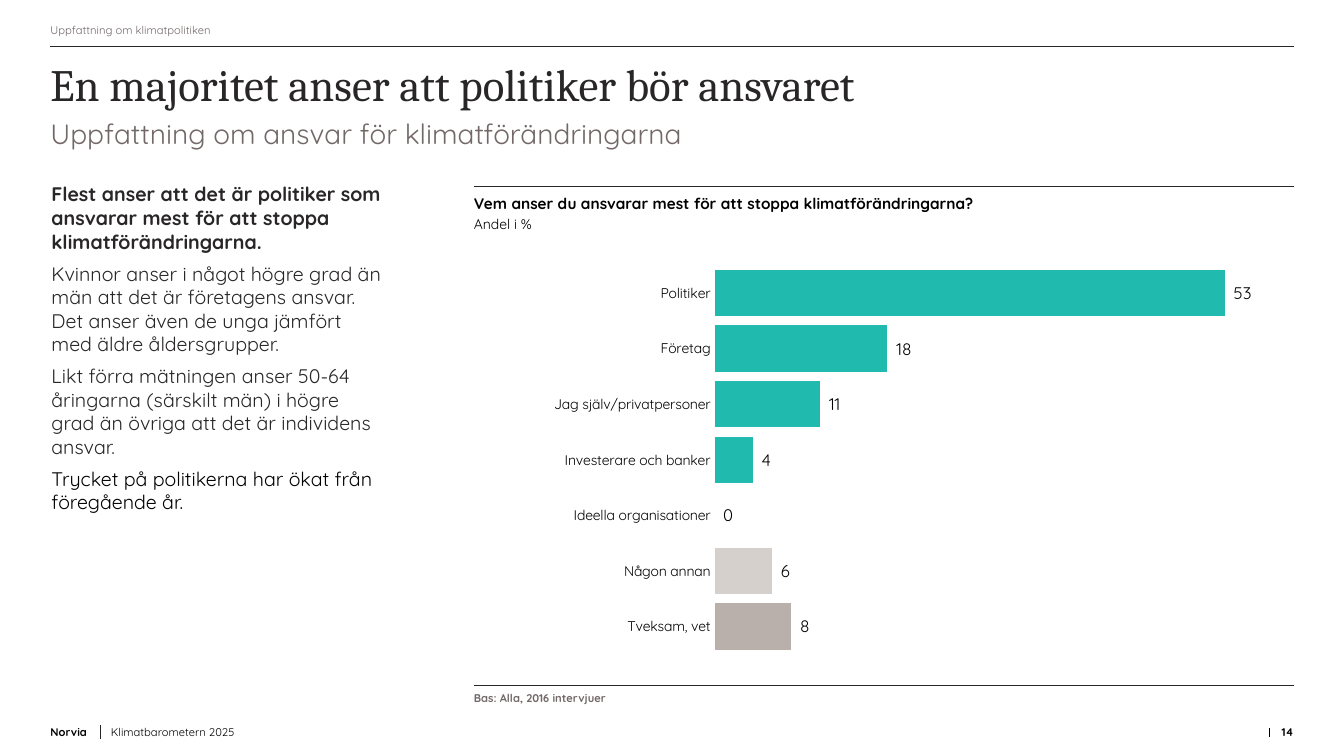
from lxml import etree
from pptx import Presentation
from pptx import util as u
from pptx.chart.data import CategoryChartData
from pptx.dml.color import RGBColor
from pptx.enum import chart as ch, shapes, text
from pptx.oxml import ns, parse_xml

Inches, Pt = u.Inches, u.Pt
INK = RGBColor(0x28, 0x26, 0x26)
BLACK = RGBColor(0, 0, 0)
GREY = RGBColor(0x73, 0x68, 0x68)
WHITE = RGBColor(0xFF, 0xFF, 0xFF)
TEAL = RGBColor(0x20, 0xBA, 0xAF)
SAND = RGBColor(0xD6, 0xD0, 0xCD)
TAUPE = RGBColor(0xBA, 0xB0, 0xAB)
SANS, SERIF = "Quicksand", "Cambria"
LEFT, RIGHT, COL = 0.5, 12.83, 4.7

BODY = [
    ("Flest anser att det är politiker som ansvarar mest för att stoppa "
     "klimatförändringarna.", True, INK),
    ("Kvinnor anser i något högre grad än män att det är företagens ansvar. "
     "Det anser även de unga jämfört med äldre åldersgrupper.", False, INK),
    ("Likt förra mätningen anser 50-64 åringarna (särskilt män) i högre grad "
     "än övriga att det är individens ansvar.", False, INK),
    ("Trycket på politikerna har ökat från föregående år.", False, BLACK),
]
BARS = [
    ("Politiker", 53, TEAL),
    ("Företag", 18, TEAL),
    ("Jag själv/privatpersoner", 11, TEAL),
    ("Investerare och banker", 4, TEAL),
    ("Ideella organisationer", 0, TEAL),
    ("Någon annan", 6, SAND),
    ("Tveksam, vet", 8, TAUPE),
]


def style(font, size, color=BLACK, bold=False, face=SANS):
    font.size, font.name, font.bold = Pt(size), face, bold
    font.color.rgb = color


def write(slide, box, paras, size=8, color=BLACK, bold=False, face=SANS,
          anchor=text.MSO_ANCHOR.TOP, align=text.PP_ALIGN.LEFT,
          top=0, after=0, lead=None):
    """Add a text box; paras is a string or a list of (text, bold, color)."""
    frame = slide.shapes.add_textbox(*map(Inches, box)).text_frame
    frame.word_wrap = True
    frame.vertical_anchor = anchor
    frame.margin_left = frame.margin_right = frame.margin_bottom = 0
    frame.margin_top = Inches(top)
    if isinstance(paras, str):
        paras = [(paras, bold, color)]
    for i, (words, heavy, tint) in enumerate(paras):
        para = frame.add_paragraph() if i else frame.paragraphs[0]
        para.alignment = align
        para.space_after = Pt(after)
        if lead:
            para.line_spacing = Pt(lead)
        run = para.add_run()
        run.text = words
        style(run.font, size, tint, heavy, face)


def rule(slide, x1, y1, x2, y2, color=INK):
    line = slide.shapes.add_connector(
        shapes.MSO_CONNECTOR.STRAIGHT, *map(Inches, (x1, y1, x2, y2)))
    line.line.color.rgb = color
    line.line.width = Pt(0.5)
    etree.SubElement(line._element.spPr, ns.qn("a:effectLst"))


def place_plot(chart, x, y, w, h):
    """Fix the inner plot area as fractions of the chart."""
    area = chart._chartSpace.chart.plotArea
    for old in area.findall(ns.qn("c:layout")):
        area.remove(old)
    area.insert(0, parse_xml(
        f'<c:layout {ns.nsdecls("c")}><c:manualLayout>'
        '<c:layoutTarget val="inner"/><c:xMode val="edge"/>'
        f'<c:yMode val="edge"/><c:x val="{x}"/><c:y val="{y}"/>'
        f'<c:w val="{w}"/><c:h val="{h}"/></c:manualLayout></c:layout>'))


def bars(slide, box):
    data = CategoryChartData(number_format="#\\ ##0")
    data.categories = [name for name, _, _ in BARS]
    data.add_series("Andel i %", [value for _, value, _ in BARS])
    chart = slide.shapes.add_chart(
        ch.XL_CHART_TYPE.BAR_CLUSTERED, *map(Inches, box), data).chart
    chart.has_legend = chart.has_title = False
    style(chart.font, 10)
    place_plot(chart, 0.294, 0.037, 0.706, 0.927)

    # Axes
    cat, val = chart.category_axis, chart.value_axis
    cat.reverse_order = True
    cat.major_tick_mark = cat.minor_tick_mark = ch.XL_TICK_MARK.NONE
    cat.format.line.fill.background()
    style(cat.tick_labels.font, 10)
    val.visible = val.has_major_gridlines = False
    val.minimum_scale, val.maximum_scale = 0, 60

    # Bars and their labels
    plot = chart.plots[0]
    plot.gap_width, plot.vary_by_categories = 17, False
    series = plot.series[0]
    series.invert_if_negative = False
    paint(series.format, TEAL)
    for i, (_, _, color) in enumerate(BARS):
        if color != TEAL:
            paint(series.points[i].format, color)
    labels = series.data_labels
    labels.show_value = True
    labels.position = ch.XL_LABEL_POSITION.OUTSIDE_END
    labels.number_format = "#\\ ##0"
    labels.number_format_is_linked = False
    style(labels.font, 12)


def paint(fmt, color):
    fmt.fill.solid()
    fmt.fill.fore_color.rgb = color
    fmt.line.color.rgb = WHITE
    fmt.line.width = Pt(0.75)


def main():
    deck = Presentation()
    deck.slide_width, deck.slide_height = Inches(13.33), Inches(7.5)
    slide = deck.slides.add_slide(deck.slide_layouts[6])
    wide = RIGHT - LEFT
    low = text.MSO_ANCHOR.BOTTOM

    # Header
    write(slide, (LEFT, 0.19, wide, 0.21), "Uppfattning om klimatpolitiken",
          color=GREY, anchor=text.MSO_ANCHOR.MIDDLE)
    rule(slide, LEFT, 0.46, RIGHT, 0.46)
    write(slide, (LEFT, 0.46, wide, 0.71),
          "En majoritet anser att politiker bör ansvaret",
          size=32, color=INK, face=SERIF, top=0.1)
    write(slide, (LEFT, 1.16, wide, 0.46),
          "Uppfattning om ansvar för klimatförändringarna",
          size=20, color=GREY)

    # Left column
    write(slide, (0.51, 1.81, 3.28, 5.2), BODY, size=14, after=6, lead=16.8)

    # Chart panel
    for y in (1.85, 6.8):
        rule(slide, COL, y, RIGHT, y)
    write(slide, (COL, 1.93, 5.18, 0.15),
          "Vem anser du ansvarar mest för att stoppa klimatförändringarna?",
          size=11, bold=True)
    write(slide, (COL, 2.14, 5.18, 0.15), "Andel i %", size=10)
    bars(slide, (COL, 2.48, 8.12, 4.16))
    write(slide, (COL, 6.86, 6.73, 0.15), "Bas: Alla, 2016 intervjuer",
          color=GREY, bold=True)

    # Footer
    write(slide, (LEFT, 7.16, 0.5, 0.17), "Norvia", bold=True, anchor=low)
    rule(slide, 1, 7.33, 1, 7.19)
    write(slide, (1.1, 7.16, 7.8, 0.17), "Klimatbarometern 2025", anchor=low)
    rule(slide, 12.59, 7.22, 12.59, 7.31, BLACK)
    write(slide, (12.59, 7.16, 0.24, 0.17), "14", bold=True, anchor=low,
          align=text.PP_ALIGN.RIGHT)

    deck.save("out.pptx")


if __name__ == "__main__":
    main()
